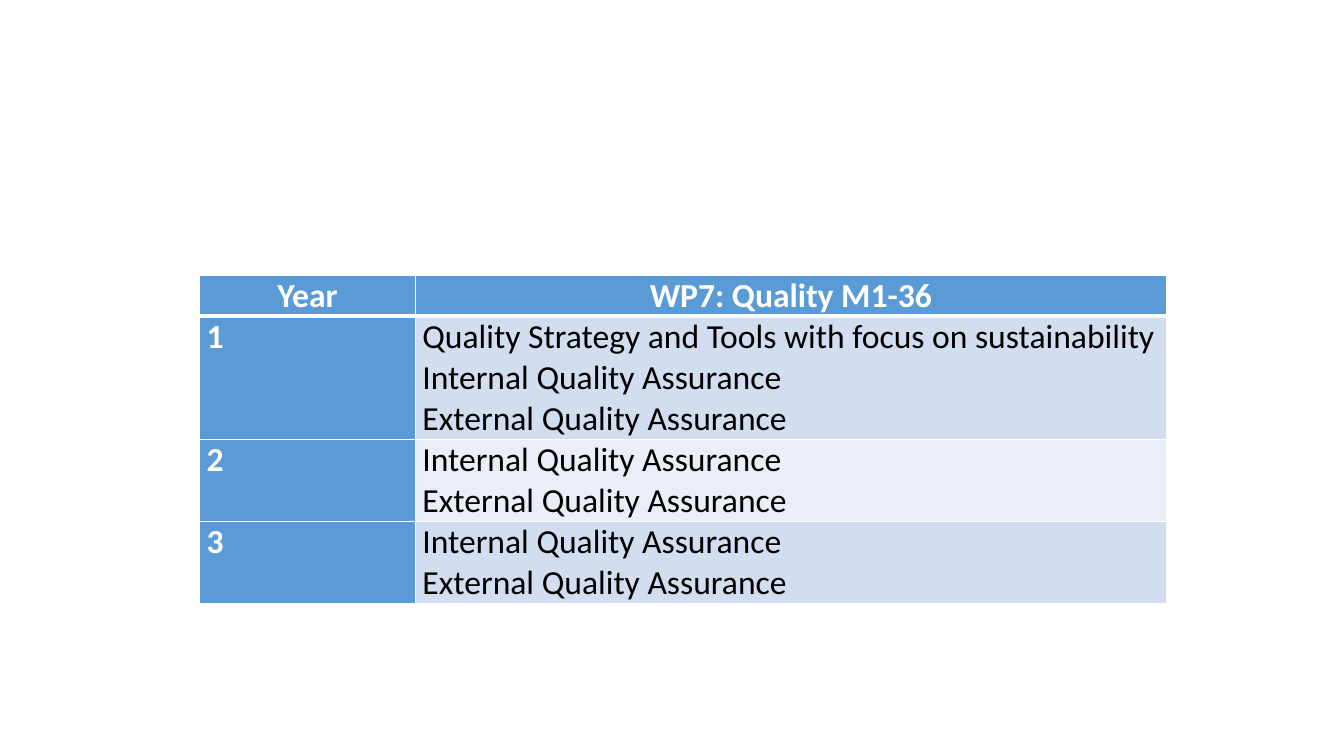
import lxml.etree
import pptx
import pptx.dml.color
import pptx.enum.text
import pptx.oxml.ns
import pptx.util

Inches = pptx.util.Inches
RGBColor = pptx.dml.color.RGBColor
qn = pptx.oxml.ns.qn

WHITE = RGBColor(0xFF, 0xFF, 0xFF)
BLACK = RGBColor(0x00, 0x00, 0x00)
BLUE = RGBColor(0x5B, 0x9B, 0xD5)
BAND_DARK = RGBColor(0xD2, 0xDE, 0xEF)
BAND_LIGHT = RGBColor(0xEA, 0xEF, 0xF7)

LINE_HEIGHT = 0.4
ASSURANCE = ["Internal Quality Assurance", "External Quality Assurance"]
ROWS = [
    ("Year", ["WP7: Quality M1-36"]),
    ("1", ["Quality Strategy and Tools with focus on sustainability"] + ASSURANCE),
    ("2", ASSURANCE),
    ("3", ASSURANCE),
]


def add_border(cell, side, points):
    """Draw a white border on one side (L, R, T or B); call before filling the cell."""
    tcPr = cell._tc.get_or_add_tcPr()
    ln = lxml.etree.SubElement(tcPr, qn("a:ln" + side), w=str(pptx.util.Pt(points)))
    fill = lxml.etree.SubElement(ln, qn("a:solidFill"))
    lxml.etree.SubElement(fill, qn("a:srgbClr"), val=str(WHITE))


prs = pptx.Presentation()
prs.slide_width = Inches(13.33)
prs.slide_height = Inches(7.5)
s = prs.slides.add_slide(prs.slide_layouts[6])

table = s.shapes.add_table(
    len(ROWS), 2, Inches(1.98), Inches(2.73), Inches(9.59), Inches(8 * LINE_HEIGHT)
).table
table.columns[0].width = Inches(2.14)
table.columns[1].width = Inches(7.45)

for i, (year, tasks) in enumerate(ROWS):
    table.rows[i].height = Inches(LINE_HEIGHT * len(tasks))
    for j, lines in enumerate([[year], tasks]):
        cell = table.cell(i, j)
        is_heading = i == 0 or j == 0
        cell.margin_left = cell.margin_right = Inches(0.07)
        cell.margin_top = cell.margin_bottom = 0

        for side in "LRTB":
            under_header = (i, side) in [(0, "B"), (1, "T")]
            add_border(cell, side, 3 if under_header else 1)
        cell.fill.solid()
        band = BAND_DARK if i % 2 else BAND_LIGHT
        cell.fill.fore_color.rgb = BLUE if is_heading else band

        cell.text_frame.text = "\n".join(lines)
        for p in cell.text_frame.paragraphs:
            if i == 0:
                p.alignment = pptx.enum.text.PP_ALIGN.CENTER
            for r in p.runs:
                r.font.name = "Calibri"
                r.font.size = pptx.util.Pt(24)
                r.font.bold = is_heading
                r.font.color.rgb = WHITE if is_heading else BLACK

prs.save("out.pptx")
